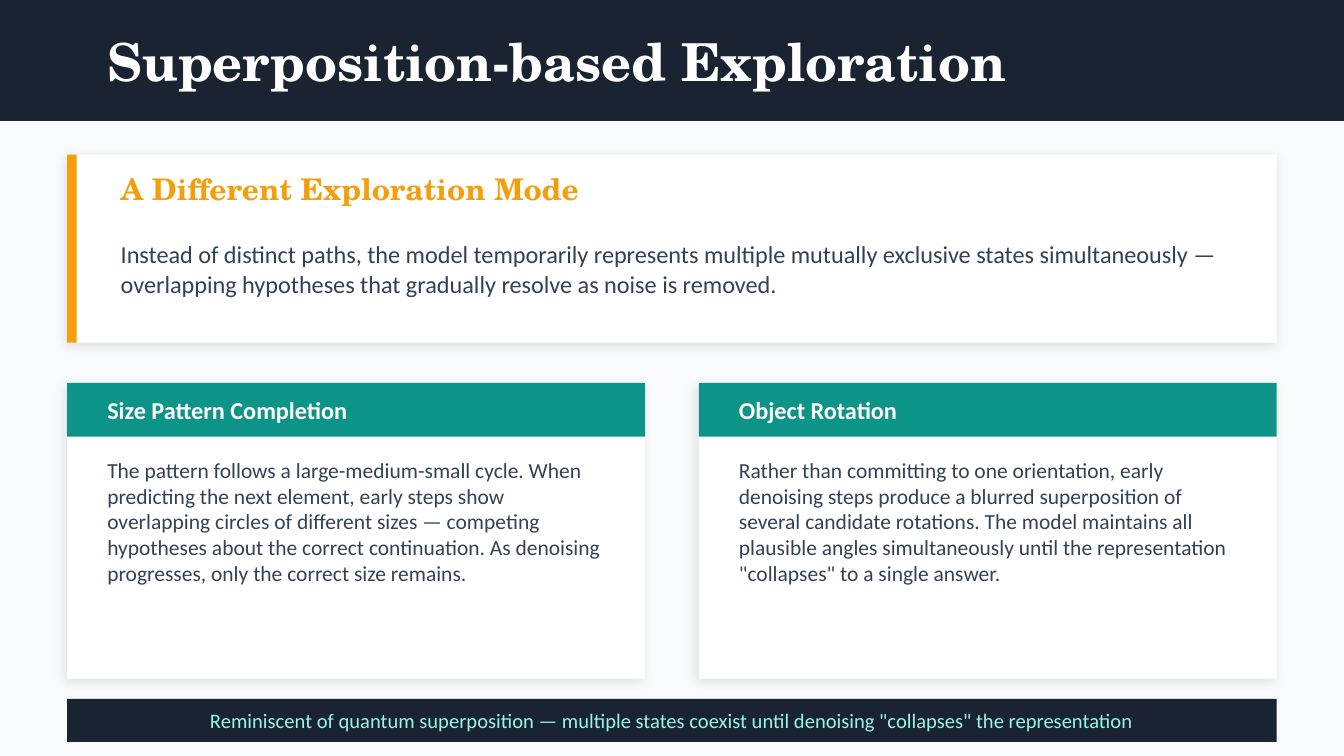
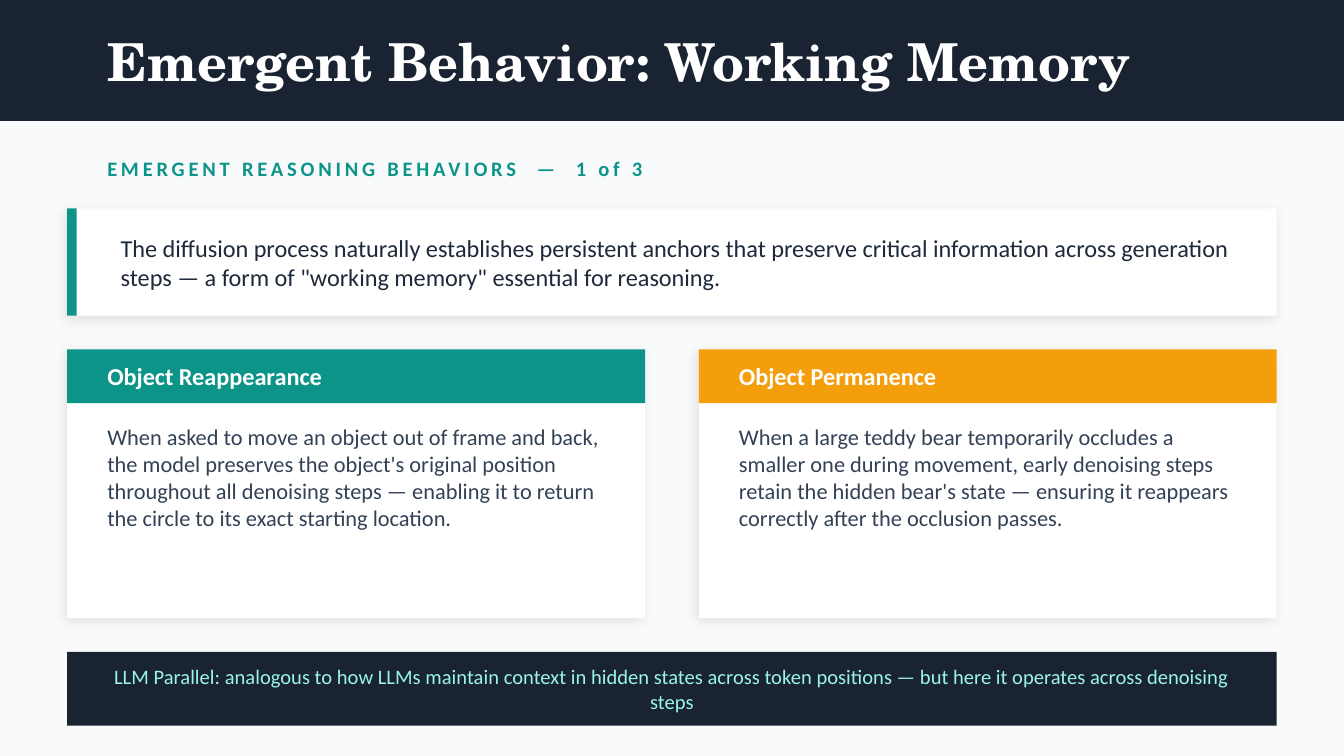
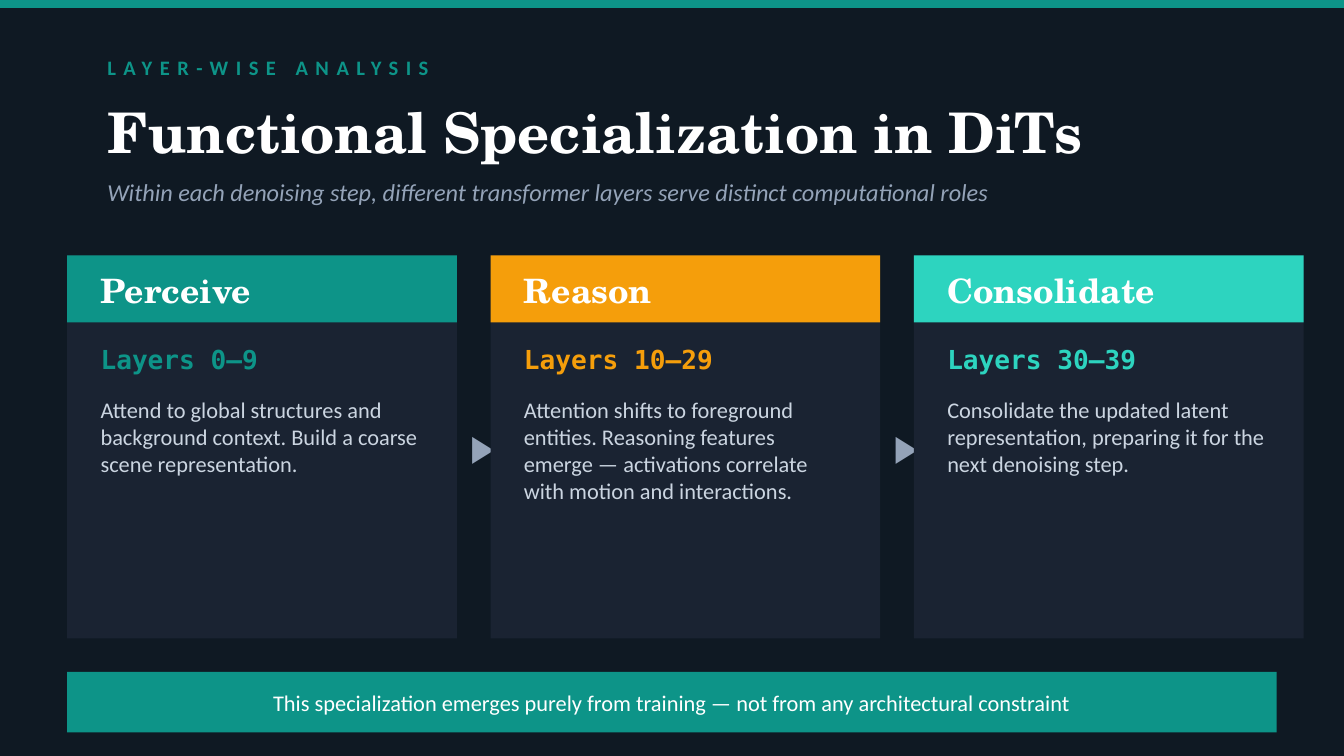
from lxml.etree import SubElement
from pptx import Presentation
from pptx.dml.color import RGBColor
from pptx.enum.shapes import MSO_SHAPE
from pptx.enum.text import MSO_ANCHOR, MSO_AUTO_SIZE, PP_ALIGN
from pptx.oxml.ns import qn
from pptx.util import Inches, Pt

SLIDE_WIDTH = 10
SLIDE_HEIGHT = SLIDE_WIDTH * 9 / 16
MARGIN, CONTENT_WIDTH = 0.5, 9
TEXT_LEFT, TEXT_WIDTH = 0.7, 8.6
TITLE_ONLY_LAYOUT = 5

NAVY, MIDNIGHT, PAPER, WHITE = "1A2332", "0F1923", "F8FAFC", "FFFFFF"
TEAL, AMBER, AQUA, MINT = "0D9488", "F59E0B", "2DD4BF", "99F6E4"
SLATE, INK, GRAY, SILVER = "334155", "1E293B", "94A3B8", "CBD5E1"
SERIF, SANS, MONO = "TeX Gyre Schola", "Calibri", "DejaVu Sans Mono"

LIGHT_SLIDES = [
    {
        "title": "Superposition-based Exploration",
        "callout": {"top": 1.15, "height": 1.4, "color": AMBER},
        "callout_texts": [
            ("A Different Exploration Mode", (0.8, 1.25, 8.4, 0.3),
             {"name": SERIF, "size": 16, "color": AMBER, "bold": True}),
            ("Instead of distinct paths, the model temporarily represents multiple mutually "
             "exclusive states simultaneously — overlapping hypotheses that gradually resolve "
             "as noise is removed.", (0.8, 1.6, 8.4, 0.8), {"size": 13, "color": SLATE}),
        ],
        "cards": {"top": 2.85, "height": 2.2, "text_height": 1.6, "size": 11.5},
        "card_texts": [
            ("Size Pattern Completion", TEAL,
             "The pattern follows a large-medium-small cycle. When predicting the next element, "
             "early steps show overlapping circles of different sizes — competing hypotheses "
             "about the correct continuation. As denoising progresses, only the correct size "
             "remains."),
            ("Object Rotation", TEAL,
             "Rather than committing to one orientation, early denoising steps produce a blurred "
             "superposition of several candidate rotations. The model maintains all plausible "
             "angles simultaneously until the representation \"collapses\" to a single answer."),
        ],
        "footer": ("Reminiscent of quantum superposition — multiple states coexist until "
                   "denoising \"collapses\" the representation", 5.2, 0.32),
    },
    {
        "title": "Emergent Behavior: Working Memory",
        "callout": {"top": 1.55, "height": 0.8, "color": TEAL},
        "callout_texts": [
            ("EMERGENT REASONING BEHAVIORS  —  1 of 3", (TEXT_LEFT, 1.1, TEXT_WIDTH, 0.3),
             {"size": 11, "color": TEAL, "bold": True, "spacing": 2}),
            ("The diffusion process naturally establishes persistent anchors that preserve "
             "critical information across generation steps — a form of \"working memory\" "
             "essential for reasoning.", (0.8, 1.6, 8.5, 0.7), {"size": 13, "color": INK}),
        ],
        "cards": {"top": 2.6, "height": 2, "text_height": 1.35, "size": 12},
        "card_texts": [
            ("Object Reappearance", TEAL,
             "When asked to move an object out of frame and back, the model preserves the "
             "object's original position throughout all denoising steps — enabling it to return "
             "the circle to its exact starting location."),
            ("Object Permanence", AMBER,
             "When a large teddy bear temporarily occludes a smaller one during movement, early "
             "denoising steps retain the hidden bear's state — ensuring it reappears correctly "
             "after the occlusion passes."),
        ],
        "footer": ("LLM Parallel: analogous to how LLMs maintain context in hidden states across "
                   "token positions — but here it operates across denoising steps", 4.85, 0.55),
    },
]

STAGES = [
    ("Perceive", "Layers 0–9", TEAL,
     "Attend to global structures and background context. Build a coarse scene representation."),
    ("Reason", "Layers 10–29", AMBER,
     "Attention shifts to foreground entities. Reasoning features emerge — activations "
     "correlate with motion and interactions."),
    ("Consolidate", "Layers 30–39", AQUA,
     "Consolidate the updated latent representation, preparing it for the next denoising step."),
]


def rgb(color):
    return RGBColor.from_string(color)


def add_slide(presentation, background):
    slide = presentation.slides.add_slide(presentation.slide_layouts[TITLE_ONLY_LAYOUT])
    slide.background.fill.solid()
    slide.background.fill.fore_color.rgb = rgb(background)
    return slide


def add_shadow(shape):
    effects = shape.element.spPr.find(qn("a:effectLst"))
    shadow = SubElement(effects, qn("a:outerShdw"), blurRad=str(Pt(6)), dist=str(Pt(2)),
                        dir=str(135 * 60000), algn="bl", rotWithShape="0")
    color = SubElement(shadow, qn("a:srgbClr"), val="000000")
    SubElement(color, qn("a:alpha"), val="10000")


def add_panel(slide, area, color, shadow=False):
    shape = slide.shapes.add_shape(MSO_SHAPE.RECTANGLE, *map(Inches, area))
    shape.fill.solid()
    shape.fill.fore_color.rgb = rgb(color)
    shape.line.fill.background()
    shape.shadow.inherit = False
    if shadow:
        add_shadow(shape)
    return shape


def write(shape, text, size, color, name=SANS, spacing=0, anchor=MSO_ANCHOR.MIDDLE,
          align=PP_ALIGN.LEFT, bold=False, italic=False):
    frame = shape.text_frame
    frame_format = {"word_wrap": True, "auto_size": MSO_AUTO_SIZE.NONE,
                    "vertical_anchor": anchor}
    for attribute, value in frame_format.items():
        setattr(frame, attribute, value)
    paragraph = frame.paragraphs[0]
    paragraph.alignment = align
    run = paragraph.add_run()
    run.text = text
    font_format = {"name": name, "size": Pt(size), "bold": bold, "italic": italic}
    for attribute, value in font_format.items():
        setattr(run.font, attribute, value)
    run.font.color.rgb = rgb(color)
    if spacing:
        run.font._element.set("spc", str(spacing * 100))


def add_text(slide, text, area, **text_format):
    write(slide.shapes.add_textbox(*map(Inches, area)), text, **text_format)


def set_title(slide, text, band, top, height, size):
    title = slide.shapes.title
    band.element.addnext(title.element)
    area = {"left": TEXT_LEFT, "top": top, "width": TEXT_WIDTH, "height": height}
    for attribute, value in area.items():
        setattr(title, attribute, Inches(value))
    write(title, text, size, WHITE, SERIF, bold=True)


def add_footer(slide, text, top, height, fill, color, size):
    add_panel(slide, (MARGIN, top, CONTENT_WIDTH, height), fill)
    add_text(slide, text, (TEXT_LEFT, top, TEXT_WIDTH, height),
             size=size, color=color, align=PP_ALIGN.CENTER)


def add_cards(slide, card_texts, top, height, text_height, size):
    width, gap, inset = 4.3, 0.4, 0.2
    for index, (heading, color, body) in enumerate(card_texts):
        left = MARGIN + index * (width + gap)
        text_left, text_width = left + inset, width - 2 * inset
        add_panel(slide, (left, top, width, height), WHITE, shadow=True)
        add_panel(slide, (left, top, width, 0.4), color)
        add_text(slide, heading, (text_left, top + 0.02, text_width, 0.36),
                 size=13, color=WHITE, bold=True)
        add_text(slide, body, (text_left, top + 0.5, text_width, text_height),
                 size=size, color=SLATE, anchor=MSO_ANCHOR.TOP)


def build_light_slide(presentation, content):
    slide = add_slide(presentation, PAPER)
    band = add_panel(slide, (0, 0, SLIDE_WIDTH, 0.9), NAVY)
    set_title(slide, content["title"], band, 0.1, 0.7, 28)
    callout = content["callout"]
    top, height = callout["top"], callout["height"]
    add_panel(slide, (MARGIN, top, CONTENT_WIDTH, height), WHITE, shadow=True)
    add_panel(slide, (MARGIN, top, 0.07, height), callout["color"])
    for text, area, text_format in content["callout_texts"]:
        add_text(slide, text, area, **text_format)
    add_cards(slide, content["card_texts"], **content["cards"])
    add_footer(slide, *content["footer"], NAVY, MINT, 11)


def add_stages(slide):
    top, width, height, gap, inset = 1.9, 2.9, 2.85, 0.25, 0.15
    for index, (heading, layers, color, body) in enumerate(STAGES):
        left = MARGIN + index * (width + gap)
        text_left, text_width = left + inset, width - 2 * inset
        if index:
            add_text(slide, "▶", (left - gap, top, gap, height),
                     size=20, color=GRAY, align=PP_ALIGN.CENTER)
        add_panel(slide, (left, top, width, height), NAVY)
        add_panel(slide, (left, top, width, 0.5), color)
        add_text(slide, heading, (text_left, top + 0.03, text_width, 0.45),
                 name=SERIF, size=18, color=WHITE, bold=True)
        add_text(slide, layers, (text_left, top + 0.6, text_width, 0.35),
                 name=MONO, size=14, color=color, bold=True)
        add_text(slide, body, (text_left, top + 1, text_width, 1.6),
                 size=12, color=SILVER, anchor=MSO_ANCHOR.TOP)


def build_dark_slide(presentation):
    slide = add_slide(presentation, MIDNIGHT)
    band = add_panel(slide, (0, 0, SLIDE_WIDTH, 0.06), TEAL)
    set_title(slide, "Functional Specialization in DiTs", band, 0.7, 0.55, 30)
    add_text(slide, "LAYER-WISE ANALYSIS", (TEXT_LEFT, 0.35, TEXT_WIDTH, 0.3),
             size=11, color=TEAL, bold=True, spacing=4)
    add_text(slide, "Within each denoising step, different transformer layers serve distinct "
             "computational roles", (TEXT_LEFT, 1.25, TEXT_WIDTH, 0.35),
             size=13, color=GRAY, italic=True)
    add_stages(slide)
    add_footer(slide, "This specialization emerges purely from training — not from any "
               "architectural constraint", 5, 0.45, TEAL, WHITE, 12)


def main():
    presentation = Presentation()
    presentation.slide_width = Inches(SLIDE_WIDTH)
    presentation.slide_height = Inches(SLIDE_HEIGHT)
    for content in LIGHT_SLIDES:
        build_light_slide(presentation, content)
    build_dark_slide(presentation)
    presentation.save("out.pptx")


if __name__ == "__main__":
    main()
